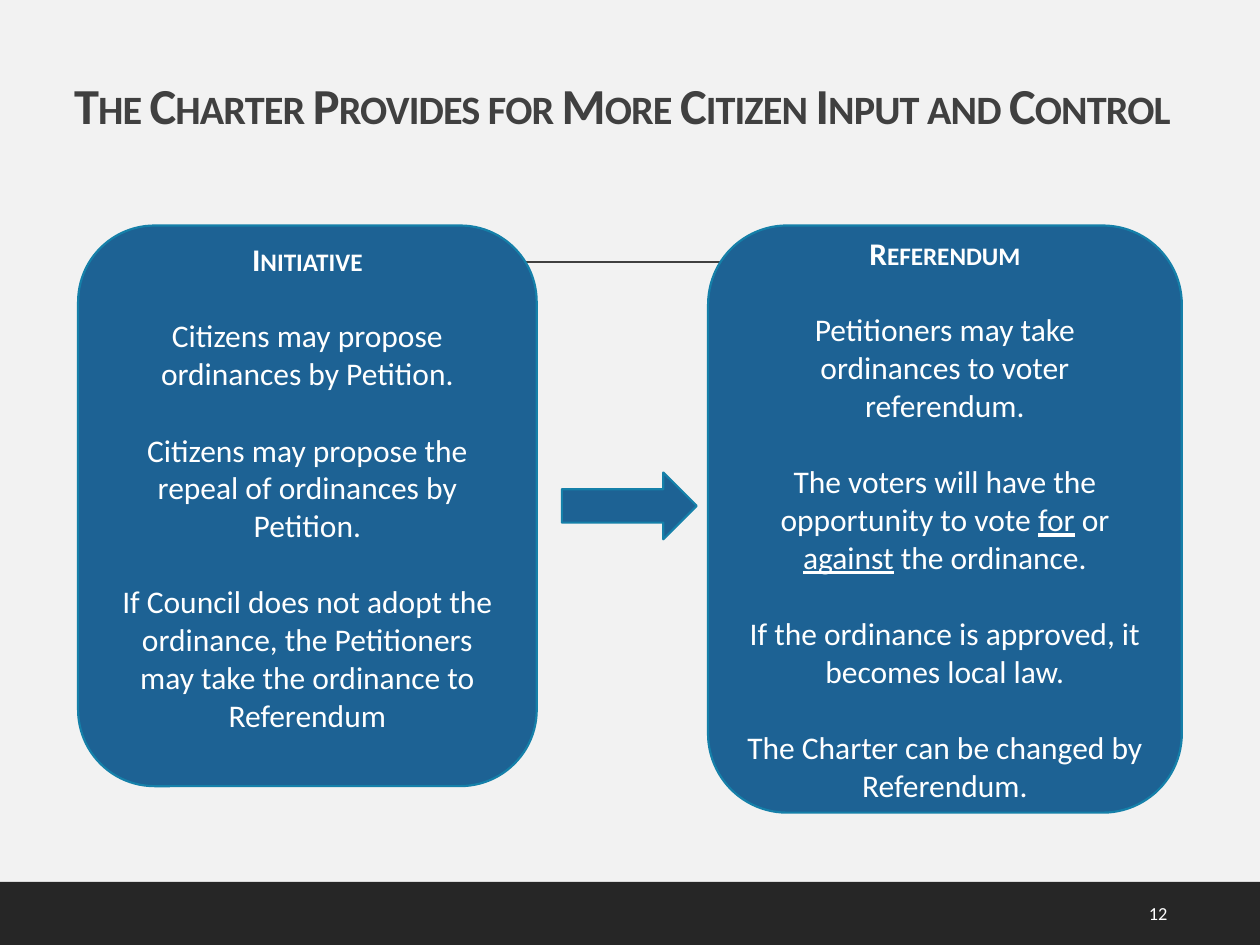
from lxml import etree
from pptx import Presentation
from pptx.dml.color import RGBColor
from pptx.enum.shapes import MSO_CONNECTOR, MSO_SHAPE
from pptx.enum.text import MSO_ANCHOR, PP_ALIGN
from pptx.oxml.ns import qn
from pptx.util import Inches, Pt

RECT = MSO_SHAPE.RECTANGLE
ROUND = MSO_SHAPE.ROUNDED_RECTANGLE
ARROW = MSO_SHAPE.RIGHT_ARROW
STRAIGHT = MSO_CONNECTOR.STRAIGHT
MIDDLE, BOTTOM = MSO_ANCHOR.MIDDLE, MSO_ANCHOR.BOTTOM
CENTER = PP_ALIGN.CENTER

PALE = RGBColor(0xF2, 0xF2, 0xF2)
DARK = RGBColor(0x26, 0x26, 0x26)
GREY = RGBColor(0x40, 0x40, 0x40)
BLUE = RGBColor(0x1D, 0x62, 0x94)
TEAL = RGBColor(0x15, 0x80, 0xA9)
WHITE = RGBColor(0xFF, 0xFF, 0xFF)

deck = Presentation()
deck.slide_width, deck.slide_height = Inches(10), Inches(7.5)
COL, ROW = deck.slide_width / 100, deck.slide_height / 100  # percent of the slide
slide = deck.slides.add_slide(deck.slide_layouts[6])
slide.background.fill.solid()
slide.background.fill.fore_color.rgb = PALE
shapes = slide.shapes


def add_block(kind, left, top, width, height, fill, edge=None):
    """Add a flat preset shape, placed in percent of the slide."""
    block = shapes.add_shape(kind, int(left * COL), int(top * ROW),
                             int(width * COL), int(height * ROW))
    block.shadow.inherit = False
    block.fill.solid()
    block.fill.fore_color.rgb = fill
    if edge is None:
        block.line.fill.background()
    else:
        block.line.color.rgb = edge
        block.line.width = Pt(1.25)
    return block


def style(run, size, color, caps=False):
    """Set the font; caps also makes the run bold small capitals."""
    run.font.name = "Calibri"
    run.font.size = Pt(size)
    run.font.color.rgb = color
    if caps:
        run.font.bold = True
        run.font._element.set("cap", "small")


# Footer band and rule
add_block(RECT, 0, 93.33, 100, 6.67, DARK)
rule = shapes.add_connector(STRAIGHT, int(9.8 * COL), int(27.73 * ROW),
                            int(91.5 * COL), int(27.73 * ROW))
rule.line.color.rgb = GREY
rule.line.width = Pt(1)
etree.SubElement(rule._element.spPr, qn("a:effectLst"))

# Title and page number
labels = [
    ("The Charter Provides for More Citizen Input and Control",
     4.9, 4.13, 89, 10.8, BOTTOM, 28.8, GREY, True),
    ("12", 90.2, 94, 6.4, 5.33, MIDDLE, 10.5, WHITE, False),
]
for text, left, top, width, height, anchor, size, color, caps in labels:
    box = shapes.add_textbox(int(left * COL), int(top * ROW),
                             int(width * COL), int(height * ROW))
    frame = box.text_frame
    frame.word_wrap = True
    frame.margin_right = 0
    frame.vertical_anchor = anchor
    frame.text = text
    line = frame.paragraphs[0]
    style(line.runs[0], size, color, caps)
    if caps:
        line.line_spacing = 0.9
        line.runs[0].font._element.set("spc", "-50")

# Two panels; underscores enclose underlined words
panels = [
    (6.2, 36.4, 59.33, 0.35, [
        "Initiative",
        "Citizens may propose ordinances by Petition.",
        "Citizens may propose the repeal of ordinances by Petition.",
        "If Council does not adopt the ordinance, the Petitioners may take "
        "the ordinance to Referendum",
    ]),
    (56.2, 37.6, 62.13, 0.05, [
        "Referendum",
        "Petitioners may take ordinances to voter referendum.",
        "The voters will have the opportunity to vote _for_ or _against_ "
        "the ordinance.",
        "If the ordinance is approved, it becomes local law.",
        "The Charter can be changed by Referendum.",
    ]),
]
for left, width, height, foot, texts in panels:
    frame = add_block(ROUND, left, 23.87, width, height, BLUE, TEAL).text_frame
    frame.word_wrap = True
    frame.vertical_anchor = MIDDLE
    frame.margin_bottom = Inches(foot)
    for row, text in enumerate(texts):
        line = frame.add_paragraph() if row else frame.paragraphs[0]
        line.alignment = CENTER
        if row:
            line.space_before = Pt(22)
        for part, words in enumerate(text.split("_")):
            run = line.add_run()
            run.text = words
            style(run, 18, WHITE, caps=row == 0)
            if part % 2:
                run.font.underline = True

add_block(ARROW, 44.6, 50, 10.7, 7.07, BLUE, TEAL)

deck.save("out.pptx")
